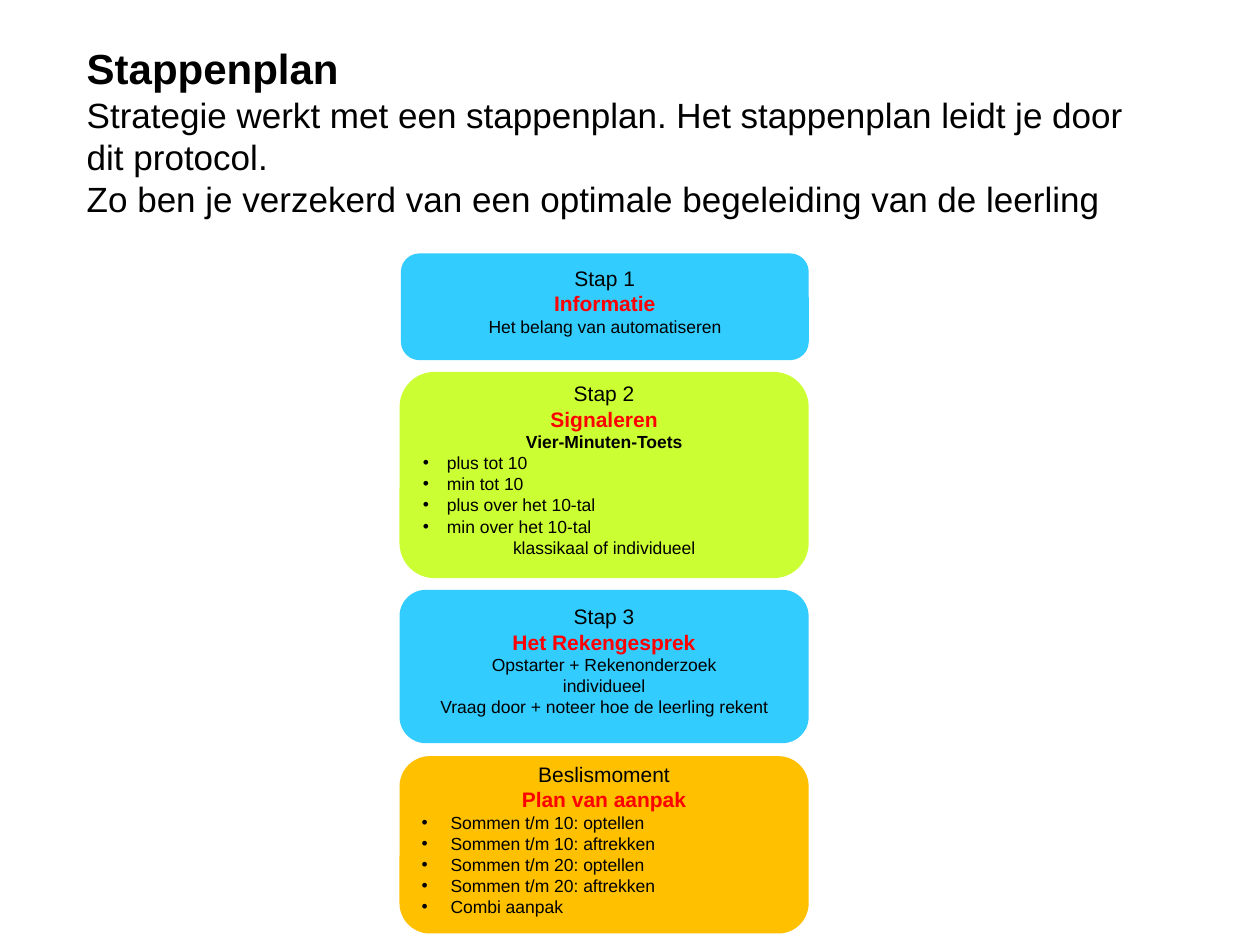
from lxml import etree
from pptx import Presentation
from pptx.dml.color import RGBColor
from pptx.enum import shapes, text
from pptx.oxml.ns import qn
from pptx.util import Inches, Pt

BLACK = RGBColor(0x00, 0x00, 0x00)
RED = RGBColor(0xFF, 0x00, 0x00)
BLUE = RGBColor(0x33, 0xCC, 0xFF)
LIME = RGBColor(0xCC, 0xFF, 0x33)
AMBER = RGBColor(0xFF, 0xC0, 0x00)

CENTER = text.PP_ALIGN.CENTER
LEFT = text.PP_ALIGN.LEFT


def add_line(frame, wording, size=10, color=BLACK, bold=False, align=CENTER, indent=0):
    """Append one formatted paragraph, bulleted when an indent is given."""
    first = frame.paragraphs[0]
    line = frame.add_paragraph() if first.runs else first
    line.alignment = align
    if indent:
        properties = line._p.get_or_add_pPr()
        properties.set("marL", str(Inches(indent)))
        properties.set("indent", str(-Inches(indent)))
        etree.SubElement(properties, qn("a:buFont")).set("typeface", "Arial")
        etree.SubElement(properties, qn("a:buChar")).set("char", "•")
    run = line.add_run()
    run.text = wording
    run.font.name = "Arial"
    run.font.size = Pt(size)
    run.font.bold = bold
    run.font.color.rgb = color


def prepare_frame(shape, bottom):
    """Return a wrapping, vertically centred text frame with its bottom margin set."""
    frame = shape.text_frame
    frame.word_wrap = True
    frame.vertical_anchor = text.MSO_ANCHOR.MIDDLE
    frame.margin_bottom = Inches(bottom)
    return frame


def add_intro(slide):
    """Add the heading and the introduction under it."""
    intro = slide.shapes.add_textbox(Inches(0.59), Inches(0.27), Inches(8.66), Inches(1.82))
    frame = prepare_frame(intro, bottom=0.33)
    add_line(frame, "Stappenplan", size=24, bold=True, align=LEFT)
    for sentence in (
        "Strategie werkt met een stappenplan. Het stappenplan leidt je door dit protocol.",
        "Zo ben je verzekerd van een optimale begeleiding van de leerling",
    ):
        add_line(frame, sentence, size=20, align=LEFT)


def add_step(slide, top, height, color, label, title, left=3.18, width=3.23):
    """Add a rounded step box with its label and title and return its text frame."""
    step = slide.shapes.add_shape(
        shapes.MSO_SHAPE.ROUNDED_RECTANGLE,
        Inches(left), Inches(top), Inches(width), Inches(height),
    )
    step.shadow.inherit = False
    step.fill.solid()
    step.fill.fore_color.rgb = color
    step.line.color.rgb = color
    step.line.width = Pt(1.25)
    frame = prepare_frame(step, bottom=0.14)
    add_line(frame, label, size=12)
    add_line(frame, title, size=12, color=RED, bold=True)
    return frame


def add_details(frame, details, **style):
    """Add several detail lines in one style."""
    for detail in details:
        add_line(frame, detail, **style)


def main():
    """Build the slide and save it."""
    deck = Presentation()
    deck.slide_width, deck.slide_height = Inches(10), Inches(7.5)
    slide = deck.slides.add_slide(deck.slide_layouts[6])

    information = add_step(slide, 2.02, 0.83, BLUE, "Stap 1", "Informatie", left=3.19, width=3.22)
    add_details(information, ["Het belang van automatiseren"])

    signals = add_step(slide, 2.96, 1.62, LIME, "Stap 2", "Signaleren")
    add_details(signals, ["Vier-Minuten-Toets"], bold=True)
    add_details(
        signals,
        ["plus tot 10", "min tot 10", "plus over het 10-tal", "min over het 10-tal"],
        align=LEFT, indent=0.19,
    )
    add_details(signals, ["klassikaal of individueel"])

    conversation = add_step(slide, 4.69, 1.2, BLUE, "Stap 3", "Het Rekengesprek")
    add_details(conversation, [
        "Opstarter + Rekenonderzoek",
        "individueel",
        "Vraag door + noteer hoe de leerling rekent",
    ])

    decision = add_step(slide, 6.01, 1.39, AMBER, "Beslismoment", "Plan van aanpak")
    sums = [f"Sommen t/m {limit}: {kind}" for limit in (10, 20) for kind in ("optellen", "aftrekken")]
    add_details(decision, sums + ["Combi aanpak"], align=LEFT, indent=0.23)

    add_intro(slide)
    deck.save("out.pptx")


if __name__ == "__main__":
    main()
